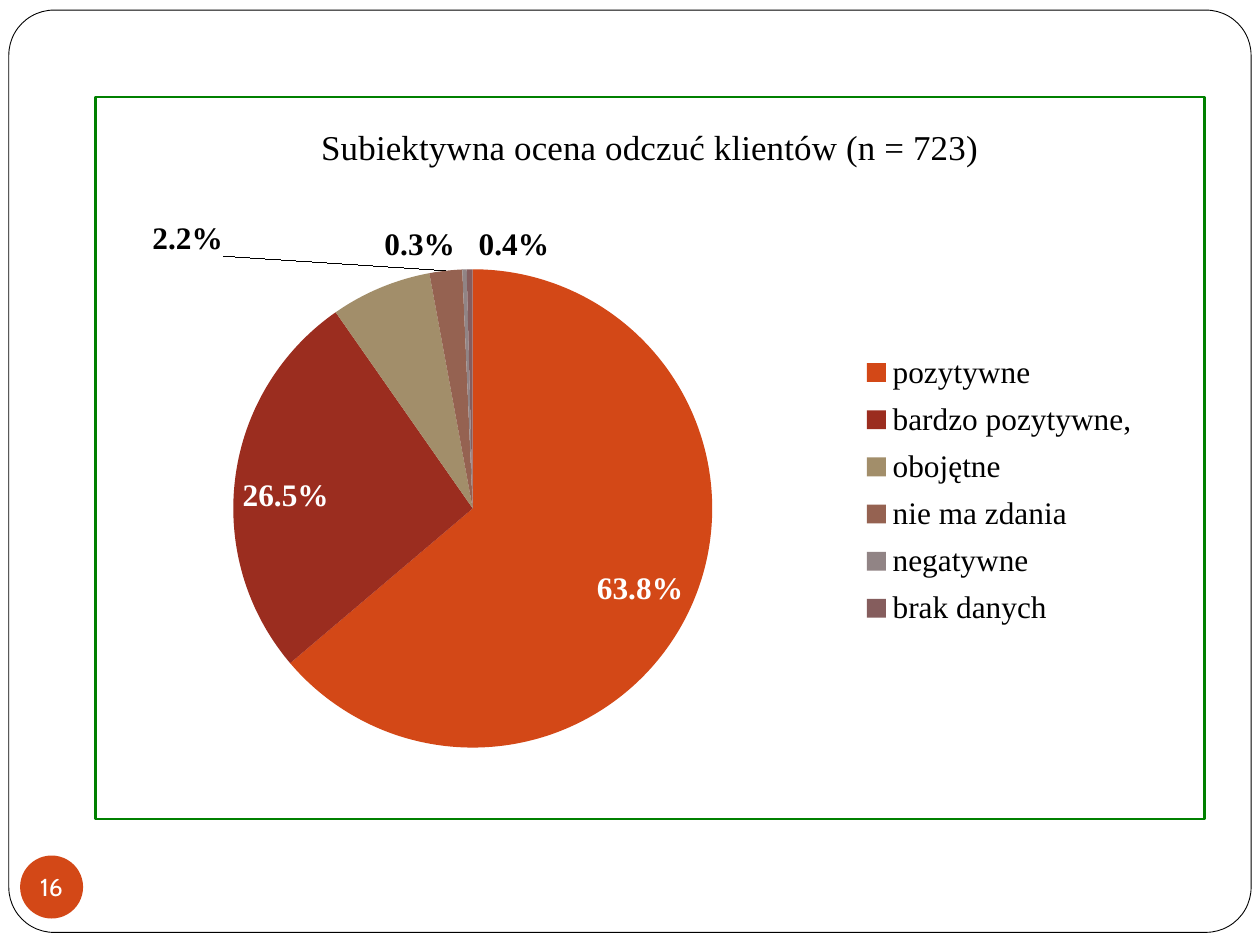
from lxml import etree
from pptx import Presentation
from pptx.chart.data import CategoryChartData
from pptx.dml.color import RGBColor
from pptx.enum.chart import XL_CHART_TYPE, XL_LABEL_POSITION, XL_LEGEND_POSITION
from pptx.enum.shapes import MSO_SHAPE
from pptx.enum.text import MSO_ANCHOR, PP_ALIGN
from pptx.oxml import parse_xml
from pptx.oxml.ns import nsdecls, qn
from pptx.util import Inches, Pt

PIE = XL_CHART_TYPE.PIE
INSIDE_END = XL_LABEL_POSITION.INSIDE_END
OUTSIDE_END = XL_LABEL_POSITION.OUTSIDE_END
RIGHT = XL_LEGEND_POSITION.RIGHT
ROUNDED, OVAL = MSO_SHAPE.ROUNDED_RECTANGLE, MSO_SHAPE.OVAL

COLORS = {"paper": "FFFFFF", "ink": "000000", "accent": "D34817", "border": "008000"}
SERIF, SANS = "Times New Roman", "Cabin"
PERCENT = "0.0%"

# Category, share, slice colour
RATINGS = [
    ("pozytywne", 0.638, "D34817"),
    ("bardzo pozytywne,", 0.265, "9B2D1F"),
    ("obojętne", 0.068, "A28E6A"),
    ("nie ma zdania", 0.022, "956251"),
    ("negatywne", 0.003, "918485"),
    ("brak danych", 0.004, "855D5D"),
]
UNLABELLED = 2
# Slice index: label shift as a fraction of the chart size
OUTER_LABELS = {3: (-0.2, -0.01), 4: (-0.04, 0), 5: (0.04, 0)}


def rgb(name):
    return RGBColor.from_string(COLORS[name])


def style_font(font, size, color, face=SERIF, bold=False):
    font.size, font.name, font.bold = Pt(size), face, bold
    font.color.rgb = rgb(color)


def add_shape(slide, kind, left, top, width, height, fill):
    shape = slide.shapes.add_shape(
        kind, Inches(left), Inches(top), Inches(width), Inches(height))
    shape.shadow.inherit = False
    shape.fill.solid()
    shape.fill.fore_color.rgb = rgb(fill)
    return shape


def add_page_frame(slide):
    frame = add_shape(slide, ROUNDED, 0.07, 0.08, 9.86, 7.32, "paper")
    frame.adjustments[0] = 0.049
    frame.line.color.rgb = rgb("ink")
    frame.line.width = Pt(0.5)


def add_page_number(slide, number):
    badge = add_shape(slide, OVAL, 0.16, 6.79, 0.5, 0.5, "accent")
    badge.line.fill.background()
    text = badge.text_frame
    text.margin_left = text.margin_right = text.margin_top = text.margin_bottom = 0
    text.word_wrap = False
    text.vertical_anchor = MSO_ANCHOR.MIDDLE
    line = text.paragraphs[0]
    line.text, line.alignment = number, PP_ALIGN.CENTER
    style_font(line.font, 14, "paper", SANS)


def manual_layout(**settings):
    """Build a chart layout element from its settings, in schema order."""
    layout = parse_xml(f"<c:layout {nsdecls('c')}><c:manualLayout/></c:layout>")
    for tag, value in settings.items():
        etree.SubElement(layout[0], qn(f"c:{tag}")).set("val", str(value))
    return layout


def place(element, after, **settings):
    """Give a plot area or legend a fixed position inside the chart."""
    for old in element.findall(qn("c:layout")):
        element.remove(old)
    layout = manual_layout(**settings)
    if after is None:
        element.insert(0, layout)
    else:
        after.addnext(layout)


def add_chart_border(chart):
    border = parse_xml(
        f"<c:spPr {nsdecls('c', 'a')}><a:noFill/><a:ln w='{Pt(1.5)}'><a:solidFill>"
        f"<a:srgbClr val='{COLORS['border']}'/></a:solidFill></a:ln></c:spPr>")
    chart.font.size = Pt(11)
    chart.element.find(qn("c:txPr")).addprevious(border)


def label_slices(series):
    labels = series.data_labels
    labels.show_value = True
    labels.number_format, labels.number_format_is_linked = PERCENT, False
    labels.position = INSIDE_END
    style_font(labels.font, 18, "paper", bold=True)

    # The middle slice carries no label
    series.points[UNLABELLED].data_label.position = INSIDE_END
    hidden = labels._element.find(qn("c:dLbl"))
    for child in hidden[1:]:
        hidden.remove(child)
    etree.SubElement(hidden, qn("c:delete")).set("val", "1")

    # Small slices are labelled outside the pie
    for index, (dx, dy) in OUTER_LABELS.items():
        label = series.points[index].data_label
        style_font(label.font, 18, "ink", bold=True)
        label.position = OUTSIDE_END
        element = labels._element.findall(qn("c:dLbl"))[-1]
        element.insert(1, manual_layout(x=dx, y=dy))
        element.insert(2, parse_xml(
            f"<c:numFmt {nsdecls('c')} formatCode='{PERCENT}' sourceLinked='0'/>"))


def add_ratings_chart(slide):
    data = CategoryChartData(number_format=PERCENT)
    data.categories = [name for name, _, _ in RATINGS]
    data.add_series("Series 1", [share for _, share, _ in RATINGS])
    chart = slide.shapes.add_chart(
        PIE, Inches(0.75), Inches(0.76), Inches(8.82), Inches(5.75), data).chart
    add_chart_border(chart)
    style_font(chart.font, 11, "ink")

    # Title
    title = chart.chart_title.text_frame.paragraphs[0]
    title.text = "Subiektywna ocena odczuć klientów (n = 723)"
    style_font(title.font, 20, "ink")
    chart.chart_title.include_in_layout = False

    # Slices
    plot = chart.plots[0]
    plot.vary_by_categories = True
    series = plot.series[0]
    for index, (_, _, color) in enumerate(RATINGS):
        fill = series.points[index].format.fill
        fill.solid()
        fill.fore_color.rgb = RGBColor.from_string(color)
    label_slices(series)
    place(chart.element.chart.plotArea, None, layoutTarget="inner",
          xMode="edge", yMode="edge", x=0.124, y=0.2, w=0.432, h=0.74)

    # Legend
    chart.has_legend = True
    legend = chart.legend
    legend.position, legend.include_in_layout = RIGHT, False
    style_font(legend.font, 18, "ink")
    place(legend._element, legend._element.find(qn("c:legendPos")),
          xMode="edge", yMode="edge", x=0.68, y=0.34, w=0.27, h=0.41)


def main():
    deck = Presentation()
    deck.slide_width, deck.slide_height = Inches(10), Inches(7.5)
    slide = deck.slides.add_slide(deck.slide_layouts[6])
    add_page_frame(slide)
    add_page_number(slide, "16")
    add_ratings_chart(slide)
    deck.save("out.pptx")


if __name__ == "__main__":
    main()
